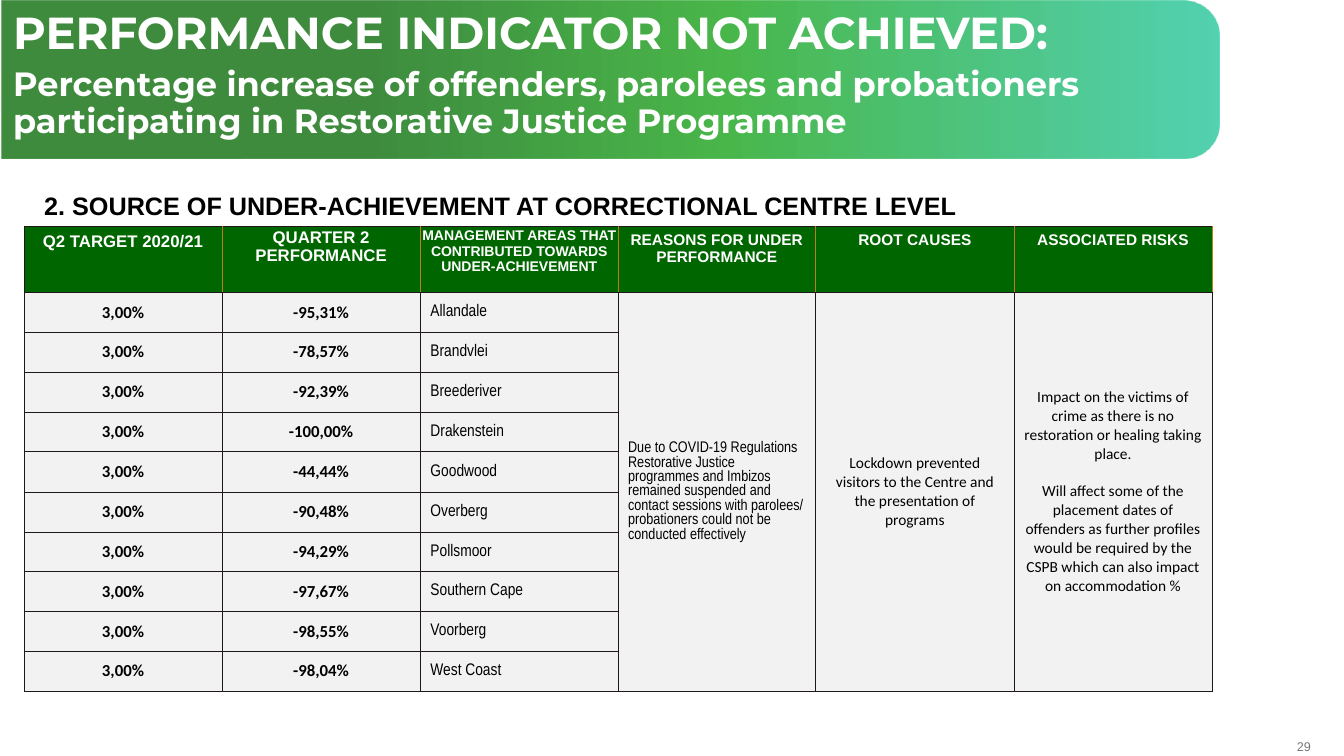
"""Builds the slide on under-achievement in the restorative justice programme."""
import dataclasses

import pptx
import pptx.dml.color
import pptx.enum.shapes
import pptx.enum.text
import pptx.oxml
import pptx.oxml.ns
import pptx.util

SCALE = 9144
LEFT = pptx.enum.text.PP_ALIGN.LEFT
MID = pptx.enum.text.PP_ALIGN.CENTER
RIGHT = pptx.enum.text.PP_ALIGN.RIGHT
TOP = pptx.enum.text.MSO_ANCHOR.TOP
CENTER = pptx.enum.text.MSO_ANCHOR.MIDDLE


@dataclasses.dataclass(frozen=True)
class Theme:
    """Holds the colours, fonts and type sizes of the slide."""
    white: str = "FFFFFF"
    black: str = "000000"
    grey: str = "77787B"
    green: str = "006600"
    pale: str = "F2F2F2"
    dark: str = "1E1918"
    gold: str = "BF7B17"
    band: tuple = ((30, "006600", 75), (59, "009900", 71), (100, "00BC8D", 67))
    head: str = "Montserrat"
    sans: str = "Arial"
    thin: str = "Arial Narrow"
    body: str = "Calibri"
    title: int = 32
    sub: int = 24
    lead: int = 18
    cell: int = 12
    note: int = 11
    tight: int = 10
    page: int = 9


THEME = Theme()
HEADS = [
    ("Q2 TARGET 2020/21", THEME.cell, (10, 5)),
    ("QUARTER 2\nPERFORMANCE", THEME.cell, (1, 1)),
    ("MANAGEMENT AREAS THAT CONTRIBUTED TOWARDS UNDER-ACHIEVEMENT",
     THEME.tight, (1, 1)),
    ("REASONS FOR UNDER\nPERFORMANCE", THEME.note, (10, 5)),
    ("ROOT CAUSES", THEME.note, (10, 5)),
    ("ASSOCIATED RISKS", THEME.note, (10, 5)),
]
TARGET = "3,00%"
AREAS = [
    ("-95,31%", "Allandale"), ("-78,57%", "Brandvlei"),
    ("-92,39%", "Breederiver"), ("-100,00%", "Drakenstein"),
    ("-44,44%", "Goodwood"), ("-90,48%", "Overberg"),
    ("-94,29%", "Pollsmoor"), ("-97,67%", "Southern Cape"),
    ("-98,55%", "Voorberg"), ("-98,04%", "West Coast"),
]
NOTES = [
    ("Due to COVID-19 Regulations Restorative Justice programmes and Imbizos "
     "remained suspended and contact sessions with parolees/ probationers "
     "could not be conducted effectively", THEME.thin, LEFT),
    ("Lockdown prevented visitors to the Centre and the presentation of "
     "programs", THEME.body, MID),
    ("Impact on the victims of crime as there is no restoration or healing "
     "taking place.\nWill affect some of the placement dates of offenders as "
     "further profiles would be required by the CSPB which can also impact "
     "on accommodation %", THEME.body, MID),
]


def px(num):
    """Turns px into EMU."""
    return pptx.util.Emu(num * SCALE)


def split(total, count):
    """Shares a length in whole px among equal parts."""
    edges = [round(total * i / count) for i in range(count + 1)]
    return [b - a for a, b in zip(edges, edges[1:])]


def write(frame, text, size, font=THEME.sans, color=THEME.black, bold=False,
          align=LEFT, before=0, after=0, line=None):
    """Adds each line of text to a frame as a formatted paragraph."""
    for part in text.split("\n"):
        first = not frame.text
        para = frame.paragraphs[0] if first else frame.add_paragraph()
        para.alignment = align
        para.space_before = pptx.util.Pt(0 if first else before)
        para.space_after = pptx.util.Pt(after)
        if line:
            para.line_spacing = line
        run = para.add_run()
        run.text = part
        run.font.size = pptx.util.Pt(size)
        run.font.name = font
        run.font.bold = bold
        run.font.color.rgb = pptx.dml.color.RGBColor.from_string(color)


def place(shape, left, top, width, height):
    """Moves a shape to a box given in px."""
    shape.left, shape.top = px(left), px(top)
    shape.width, shape.height = px(width), px(height)


def label(slide, box, text, inset=(10, 5), anchor=TOP, **look):
    """Adds a text box."""
    frame = slide.shapes.add_textbox(*map(px, box)).text_frame
    frame.word_wrap = True
    frame.vertical_anchor = anchor
    frame.margin_left = frame.margin_right = px(inset[0])
    frame.margin_top = frame.margin_bottom = px(inset[1])
    write(frame, text, **look)


def banner(slide):
    """Adds the rounded gradient band behind the title."""
    kind = pptx.enum.shapes.MSO_SHAPE.ROUND_2_SAME_RECTANGLE
    band = slide.shapes.add_shape(kind, *map(px, (527, -525, 157, 1208)))
    band.rotation = 90
    band.adjustments[0], band.adjustments[1] = 0.23, 0
    band.shadow.inherit = False
    band.line.fill.background()
    stops = "".join(
        f'<a:gs pos="{pos * 1000}"><a:srgbClr val="{color}">'
        f'<a:alpha val="{alpha * 1000}"/></a:srgbClr></a:gs>'
        for pos, color, alpha in THEME.band)
    fill = pptx.oxml.parse_xml(
        f'<a:gradFill {pptx.oxml.ns.nsdecls("a")} rotWithShape="1">'
        f'<a:gsLst>{stops}</a:gsLst><a:lin ang="16200000" scaled="0"/>'
        '</a:gradFill>')
    band.element.spPr.find(pptx.oxml.ns.qn("a:prstGeom")).addnext(fill)


def dress(cell, fill, edges, inset=(0, 0), anchor=CENTER):
    """Sets fill, insets and the left, right, top and bottom edges of a cell."""
    cell.fill.solid()
    cell.fill.fore_color.rgb = pptx.dml.color.RGBColor.from_string(fill)
    cell.vertical_anchor = anchor
    cell.margin_left = cell.margin_right = px(inset[0])
    cell.margin_top = cell.margin_bottom = px(inset[1])
    props = cell._tc.get_or_add_tcPr()
    for i, (side, color) in enumerate(zip("LRTB", edges)):
        props.insert(i, pptx.oxml.parse_xml(
            f'<a:ln{side} {pptx.oxml.ns.nsdecls("a")} w="6350"><a:solidFill>'
            f'<a:srgbClr val="{color}"/></a:solidFill></a:ln{side}>'))


def grid(slide):
    """Adds the table of centres, reasons, causes and risks."""
    rows, cols = len(AREAS) + 1, len(HEADS)
    box = map(px, (24, 225, 1178, 461))
    table = slide.shapes.add_table(rows, cols, *box).table
    table.first_row = table.horz_banding = False
    for col, width in zip(table.columns, split(1178, cols)):
        col.width = px(width)
    for row, height in zip(table.rows, [65] + split(396, rows - 1)):
        row.height = px(height)
    for i, (text, size, inset) in enumerate(HEADS):
        cell = table.cell(0, i)
        side = THEME.gold if i else THEME.dark
        edges = (side, THEME.gold, THEME.dark, THEME.dark)
        dress(cell, THEME.green, edges, inset, TOP)
        write(cell.text_frame, text, size, color=THEME.white, bold=True,
              align=MID)
    for i, (score, area) in enumerate(AREAS, 1):
        for j in range(cols):
            inset = (10, 5) if j == 2 or (i == 1 and j > 2) else (0, 0)
            dress(table.cell(i, j), THEME.pale, [THEME.dark] * 4, inset)
        for j, text in enumerate((TARGET, score)):
            write(table.cell(i, j).text_frame, text, THEME.cell, THEME.body,
                  bold=True, align=MID)
        write(table.cell(i, 2).text_frame, area, THEME.cell, THEME.thin)
    for j, (text, font, align) in enumerate(NOTES, 3):
        cell = table.cell(1, j)
        cell.merge(table.cell(rows - 1, j))
        write(cell.text_frame, text, THEME.note, font, align=align, before=13)


def heading(slide):
    """Fills the title placeholder and brings it in front of the band."""
    title = slide.shapes.title
    place(title, 3, 6, 1198, 57)
    frame = title.text_frame
    frame.word_wrap = True
    frame.auto_size = pptx.enum.text.MSO_AUTO_SIZE.NONE
    frame.vertical_anchor = TOP
    look = dict(font=THEME.head, color=THEME.white, bold=True, after=6,
                line=0.9)
    write(frame, "PERFORMANCE INDICATOR NOT ACHIEVED:", THEME.title, **look)
    write(frame, "Percentage increase of offenders, parolees and probationers "
          "participating in Restorative Justice Programme", THEME.sub, **look)
    title.element.getparent().append(title.element)


def main():
    """Builds and saves the slide."""
    deck = pptx.Presentation()
    deck.slide_width, deck.slide_height = px(1333), px(750)
    slide = deck.slides.add_slide(deck.slide_layouts[5])
    label(slide, (1261, 733, 39, 15), "29", inset=(0, 0), anchor=CENTER,
          size=THEME.page, color=THEME.grey, align=RIGHT)
    banner(slide)
    label(slide, (34, 184, 966, 40),
          "2. SOURCE OF UNDER-ACHIEVEMENT AT CORRECTIONAL CENTRE LEVEL",
          size=THEME.lead, bold=True)
    grid(slide)
    heading(slide)
    deck.save("out.pptx")


if __name__ == "__main__":
    main()
